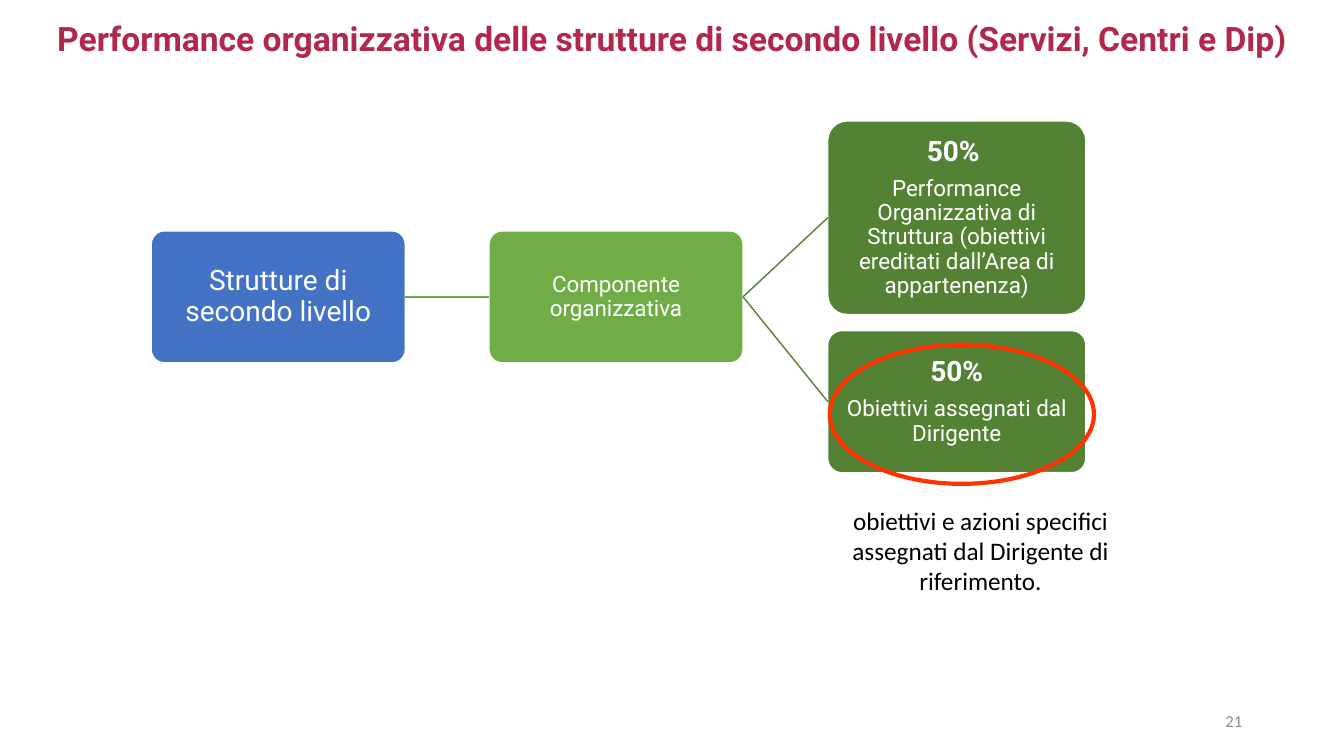
import pptx
import pptx.dml.color
import pptx.enum.shapes
import pptx.enum.text
import pptx.oxml.ns
import pptx.util
import lxml.etree

Inches = pptx.util.Inches
Pt = pptx.util.Pt
SHAPE = pptx.enum.shapes.MSO_SHAPE
ALIGN = pptx.enum.text.PP_ALIGN
ANCHOR = pptx.enum.text.MSO_ANCHOR
TOP, LEFT, BOTTOM, RIGHT = range(4)

COLORS = {
    "title": "B2284B",
    "blue": "4472C4",
    "green": "70AD47",
    "dark_green": "548235",
    "highlight": "FF3300",
    "number": "8C8C8C",
    "white": "FFFFFF",
    "black": "000000",
}


class SlideBuilder:
    heading_font = "Roboto"
    body_font = "Calibri"

    def __init__(self, slide):
        self.slide = slide

    def color(self, name):
        return pptx.dml.color.RGBColor.from_string(COLORS[name])

    def style(self, p, font, size, color, bold=False, align=ALIGN.CENTER):
        p.alignment = align
        for r in p.runs:
            r.font.name = font
            r.font.size = Pt(size)
            r.font.bold = bold
            r.font.color.rgb = self.color(color)

    def text(self, text, x, y, w, h, size, color, font=body_font, bold=False,
             align=ALIGN.CENTER, anchor=ANCHOR.TOP, wrap=True):
        sp = self.slide.shapes.add_textbox(Inches(x), Inches(y), Inches(w), Inches(h))
        tf = sp.text_frame
        tf.word_wrap = wrap
        tf.vertical_anchor = anchor
        tf.text = text
        self.style(tf.paragraphs[0], font, size, color, bold, align)

    def shape(self, kind, x, y, w, h, line, width, fill=None):
        sp = self.slide.shapes.add_shape(kind, Inches(x), Inches(y), Inches(w), Inches(h))
        sp.shadow.inherit = False
        sp.line.color.rgb = self.color(line)
        sp.line.width = Pt(width)
        if fill:
            sp.fill.solid()
            sp.fill.fore_color.rgb = self.color(fill)
        else:
            sp.fill.background()
        return sp

    def box(self, x, y, w, h, fill, lines):
        sp = self.shape(SHAPE.ROUNDED_RECTANGLE, x, y, w, h, "white", 1, fill)
        sp.adjustments[0] = 0.1
        tf = sp.text_frame
        tf.word_wrap = True
        tf.vertical_anchor = ANCHOR.MIDDLE
        tf.margin_left = tf.margin_right = tf.margin_top = tf.margin_bottom = Inches(0.01)
        tf.text = "\n".join(text for text, size, bold in lines)
        for p, (text, size, bold) in zip(tf.paragraphs, lines):
            p.line_spacing = 0.9
            p.space_after = Pt(0.35 * size)
            self.style(p, self.heading_font, size, "white", bold)
        return sp

    def link(self, start, end, color):
        cx = self.slide.shapes.add_connector(
            pptx.enum.shapes.MSO_CONNECTOR.STRAIGHT, 0, 0, 0, 0)
        cx.begin_connect(start, RIGHT)
        cx.end_connect(end, LEFT)
        cx.line.color.rgb = self.color(color)
        cx.line.width = Pt(1)
        sp_pr = cx._element.spPr
        lxml.etree.SubElement(sp_pr, pptx.oxml.ns.qn("a:effectLst"))


def main():
    prs = pptx.Presentation()
    prs.slide_width = Inches(13.33)
    prs.slide_height = Inches(7.5)
    s = SlideBuilder(prs.slides.add_slide(prs.slide_layouts[6]))

    s.text("Performance organizzativa delle strutture di secondo livello (Servizi, Centri e Dip)",
           0.45, 0.13, 12.43, 0.5, 24, "title", s.heading_font, bold=True, wrap=False)
    s.text("21", 9.42, 6.95, 3, 0.4, 12, "number", align=ALIGN.RIGHT, anchor=ANCHOR.MIDDLE)

    structures = s.box(1.5, 2.29, 2.52, 1.31, "blue",
                       [("Strutture di secondo livello", 20, False)])
    component = s.box(4.85, 2.29, 2.52, 1.31, "green",
                      [("Componente organizzativa", 16, False)])
    inherited = s.box(8.21, 1.2, 2.56, 1.92, "dark_green", [
        ("50% ", 20, True),
        ("Performance Organizzativa di Struttura (obiettivi ereditati "
         "dall’Area di appartenenza)", 16, False)])
    assigned = s.box(8.21, 3.28, 2.56, 1.41, "dark_green", [
        ("50%", 20, True),
        ("Obiettivi assegnati dal Dirigente", 16, False)])

    s.link(structures, component, "green")
    for goal in (inherited, assigned):
        s.link(component, goal, "dark_green")

    s.shape(SHAPE.OVAL, 8.23, 3.42, 2.62, 1.38, "highlight", 3)
    s.text("obiettivi e azioni specifici assegnati dal Dirigente di riferimento.",
           8.08, 4.96, 3.29, 1.01, 18, "black")

    prs.save("out.pptx")


if __name__ == "__main__":
    main()
